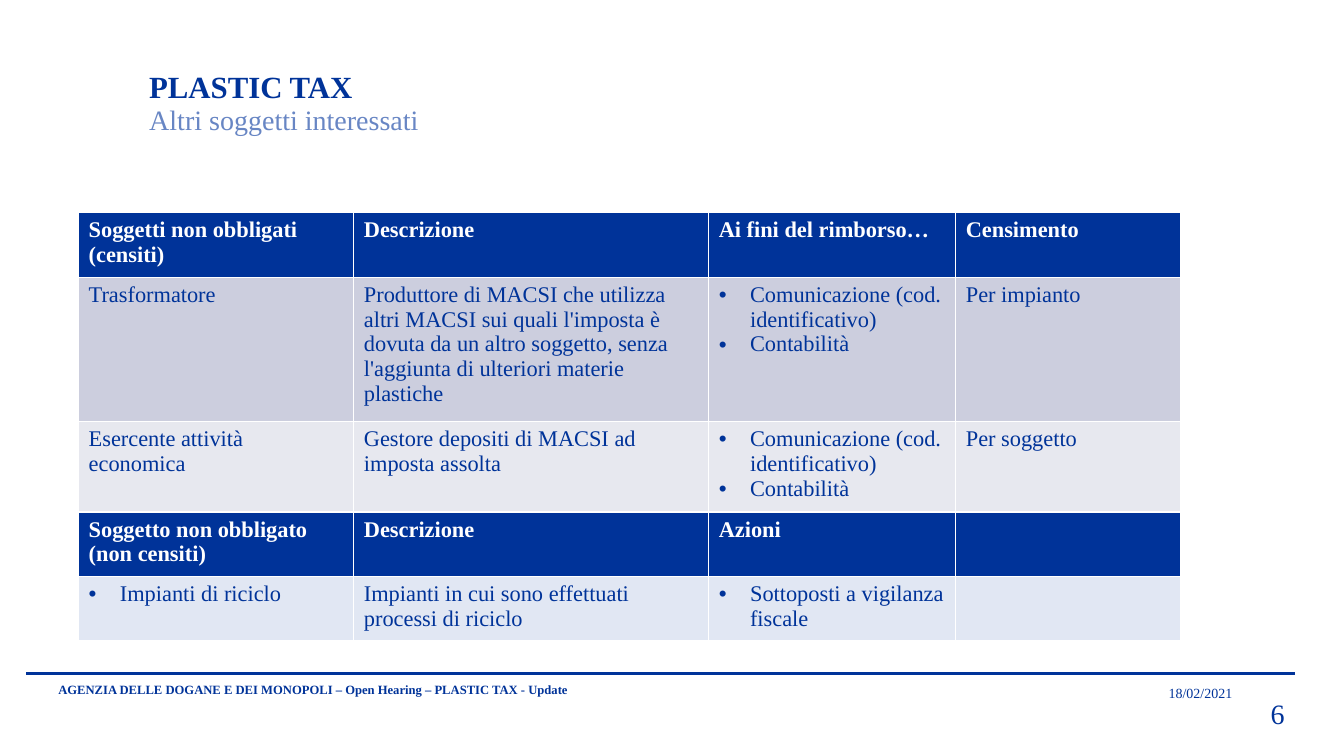
import pptx
import pptx.dml.color
import pptx.enum.shapes
import pptx.enum.text
import pptx.oxml.ns
import pptx.util
from lxml import etree

Inches = pptx.util.Inches
Pt = pptx.util.Pt
RGBColor = pptx.dml.color.RGBColor
Align = pptx.enum.text.PP_ALIGN
Anchor = pptx.enum.text.MSO_ANCHOR
qn = pptx.oxml.ns.qn

FONT = "Times New Roman"
NAVY = RGBColor(0x00, 0x33, 0x99)
LIGHT_BLUE = RGBColor(0x68, 0x86, 0xC4)
WHITE = RGBColor(0xFF, 0xFF, 0xFF)
GREY_DARK = RGBColor(0xCC, 0xCE, 0xDE)
GREY_LIGHT = RGBColor(0xE7, 0xE8, 0xEF)
PALE_BLUE = RGBColor(0xE1, 0xE7, 0xF3)


def style(para, size, color, bold=False):
    para.font.name = FONT
    para.font.size = Pt(size)
    para.font.color.rgb = color
    para.font.bold = bold


def fill_box(box, place, text, size, color, bold=False, align=Align.LEFT, anchor=Anchor.BOTTOM):
    """Place a box and give it one line of styled text."""
    box.left, box.top, box.width, box.height = [Inches(length) for length in place]
    frame = box.text_frame
    frame.word_wrap = True
    frame.auto_size = pptx.enum.text.MSO_AUTO_SIZE.NONE
    frame.vertical_anchor = anchor
    para = frame.paragraphs[0]
    para.text = text
    para.alignment = align
    para.space_before = Pt(0)
    style(para, size, color, bold)


deck = pptx.Presentation()
deck.slide_width = Inches(13.33)
deck.slide_height = Inches(7.5)
slide = deck.slides.add_slide(deck.slide_layouts[0])
shapes = slide.shapes

rule = shapes.add_connector(pptx.enum.shapes.MSO_CONNECTOR.STRAIGHT,
                            Inches(0.26), Inches(6.68), Inches(12.84), Inches(6.68))
rule.line.color.rgb = NAVY
rule.line.width = Pt(2.25)
etree.SubElement(rule.element.spPr, qn("a:effectLst"))

fill_box(shapes.title, (1.38, 0.62, 11.74, 0.47), "PLASTIC TAX", 22, NAVY,
         bold=True, anchor=Anchor.TOP)
fill_box(slide.placeholders[1], (1.38, 0.96, 10.32, 0.44),
         "Altri soggetti interessati", 20, LIGHT_BLUE)

footers = [
    ((0.48, 6.7, 9.45, 0.26),
     "AGENZIA DELLE DOGANE E DEI MONOPOLI – Open Hearing – PLASTIC TAX - Update",
     9, True, Align.LEFT),
    ((10.85, 6.61, 1.47, 0.4), "18/02/2021", 10, False, Align.RIGHT),
    ((11.68, 6.71, 1.16, 0.58), "6", 20, False, Align.RIGHT),
]
for place, text, size, bold, align in footers:
    fill_box(shapes.add_textbox(0, 0, 0, 0), place, text, size, NAVY, bold, align)

# Each row: height, fill, cells; a list inside a row is a bulleted cell.
reimbursement_steps = ["Comunicazione (cod. identificativo)", "Contabilità"]
rows = [
    (0.64, NAVY, ["Soggetti non obbligati (censiti)", "Descrizione",
                  "Ai fini del rimborso…", "Censimento"]),
    (1.43, GREY_DARK, ["Trasformatore",
                       "Produttore di MACSI che utilizza altri MACSI sui quali l'imposta è "
                       "dovuta da un altro soggetto, senza l'aggiunta di ulteriori materie "
                       "plastiche",
                       reimbursement_steps, "Per impianto"]),
    (0.9, GREY_LIGHT, ["Esercente attività economica",
                       "Gestore depositi di MACSI ad imposta assolta",
                       reimbursement_steps, "Per soggetto"]),
    (0.64, NAVY, ["Soggetto non obbligato (non censiti)", "Descrizione", "Azioni", ""]),
    (0.64, PALE_BLUE, [["Impianti di riciclo"],
                       "Impianti in cui sono effettuati processi di riciclo",
                       ["Sottoposti a vigilanza fiscale"], ""]),
]
column_widths = [2.73, 3.52, 2.45, 2.23]
table = shapes.add_table(len(rows), len(column_widths), Inches(0.78), Inches(2.11),
                         Inches(sum(column_widths)),
                         Inches(sum(height for height, _, _ in rows))).table
for column, width in zip(table.columns, column_widths):
    column.width = Inches(width)

for row, (height, fill, contents) in zip(table.rows, rows):
    row.height = Inches(height)
    is_header = fill == NAVY
    for cell, content in zip(row.cells, contents):
        cell.fill.solid()
        cell.fill.fore_color.rgb = fill
        bulleted = isinstance(content, list)
        cell.text = "\n".join(content) if bulleted else content
        for para in cell.text_frame.paragraphs:
            if bulleted:
                properties = para._p.get_or_add_pPr()
                properties.set("marL", str(Inches(0.31)))
                properties.set("indent", str(-Inches(0.31)))
                etree.SubElement(properties, qn("a:buFont"), typeface="Arial")
                etree.SubElement(properties, qn("a:buChar"), char="•")
            style(para, 16, WHITE if is_header else NAVY, is_header)

deck.save("out.pptx")
